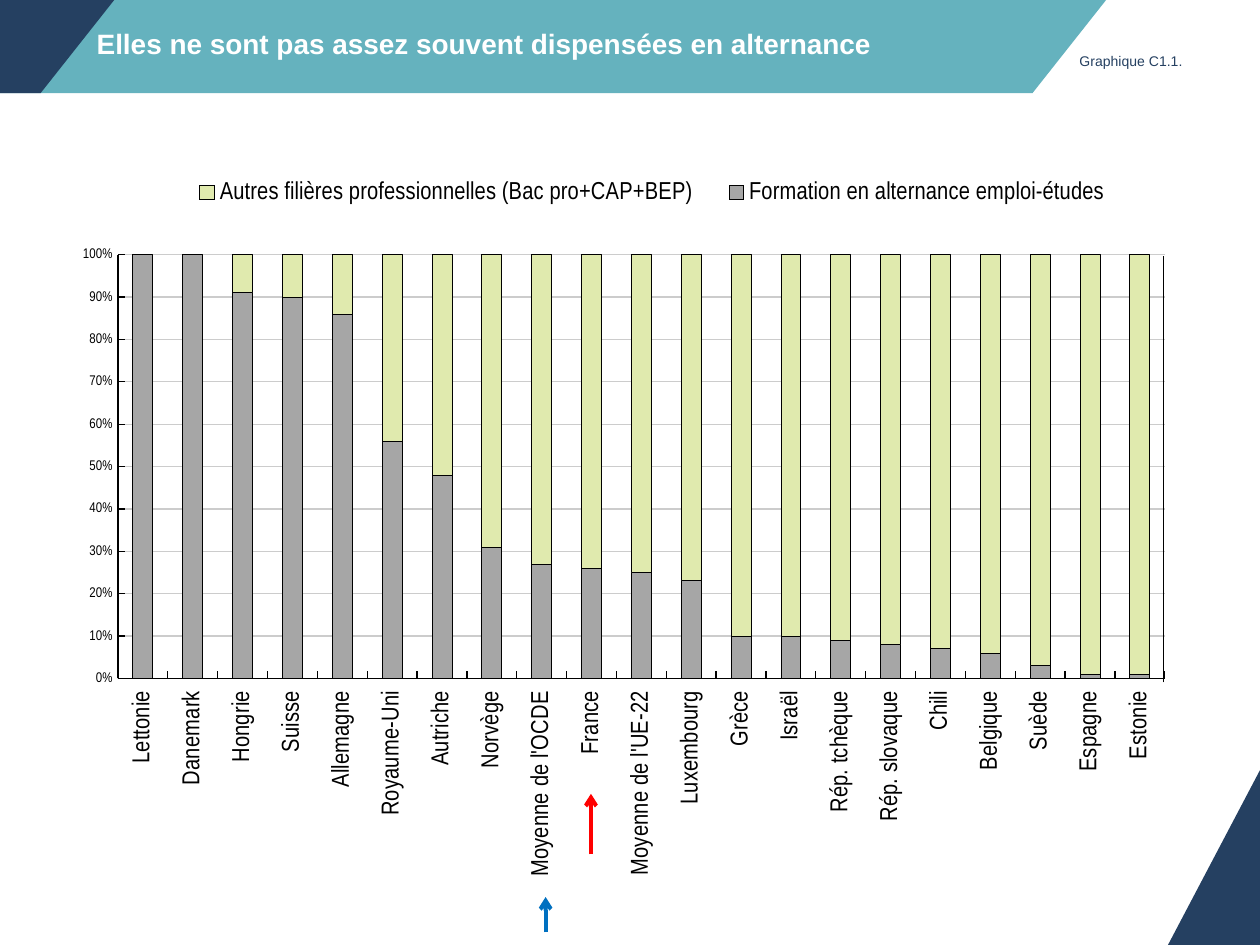
from lxml import etree
from pptx import Presentation
from pptx.chart.data import CategoryChartData
from pptx.dml.color import RGBColor
from pptx.enum import chart as ch, shapes, text
from pptx.oxml import ns
from pptx.util import Pt

TEAL = RGBColor(0x65, 0xB2, 0xBE)
NAVY = RGBColor(0x25, 0x40, 0x61)
WHITE = RGBColor(0xFF, 0xFF, 0xFF)
BLACK = RGBColor(0, 0, 0)
RED = RGBColor(0xFF, 0, 0)
BLUE = RGBColor(0, 0x70, 0xC0)
GRID = RGBColor(0xCC, 0xCC, 0xCC)
GREY = RGBColor(0xA6, 0xA6, 0xA6)
LIME = RGBColor(0xE0, 0xEA, 0xAE)


def place(element, index, *fractions):
    """Give a legend or plot area a manual layout: x, y, w, h as shares of the chart."""
    for old in element.findall(ns.qn("c:layout")):
        element.remove(old)
    layout = etree.Element(ns.qn("c:layout"))
    manual = etree.SubElement(layout, ns.qn("c:manualLayout"))
    if element.tag == ns.qn("c:plotArea"):
        etree.SubElement(manual, ns.qn("c:layoutTarget"), val="inner")
    for side in "xy":
        etree.SubElement(manual, ns.qn(f"c:{side}Mode"), val="edge")
    for side, fraction in zip("xywh", fractions):
        etree.SubElement(manual, ns.qn(f"c:{side}"), val=str(fraction))
    element.insert(index, layout)


def style_font(font, **values):
    color = values.pop("color", BLACK)
    for name, value in values.items():
        setattr(font, name, value)
    font.color.rgb = color


deck = Presentation()
deck.slide_width, deck.slide_height = Pt(720), Pt(540)
page = deck.slides.add_slide(deck.slide_layouts[6])

# Banner and corner
slanted = shapes.MSO_SHAPE.PARALLELOGRAM
corner = shapes.MSO_SHAPE.ISOSCELES_TRIANGLE
for kind, left, top, width, height, color in (
    (slanted, -42.5, 0, 674.6, 53.3, TEAL),
    (slanted, -42, 0, 107.3, 53.3, NAVY),
    (corner, 660.2, 417.6, 143.3, 136.1, NAVY),
):
    block = page.shapes.add_shape(kind, Pt(left), Pt(top), Pt(width), Pt(height))
    block.shadow.inherit = False
    block.fill.solid()
    block.fill.fore_color.rgb = color
    block.line.fill.background()
    if kind == slanted:
        block.adjustments[0] = 0.79

# Title and reference
for words, left, top, width, height, anchor, font in (
    ("Elles ne sont pas assez souvent dispensées en alternance", 48.2, 0, 566.6, 49,
     text.MSO_ANCHOR.MIDDLE, {"size": Pt(16), "bold": True, "color": WHITE}),
    ("Graphique C1.1.", 609.8, 26.6, 79.2, 26.6,
     text.MSO_ANCHOR.TOP, {"size": Pt(8), "color": NAVY}),
):
    box = page.shapes.add_textbox(Pt(left), Pt(top), Pt(width), Pt(height))
    box.text_frame.word_wrap = True
    box.text_frame.vertical_anchor = anchor
    span = box.text_frame.paragraphs[0].add_run()
    span.text = words
    style_font(span.font, name="Arial", **font)

# Chart: the two series add up to 100 %
apprentices = {
    "Lettonie": 100, "Danemark": 100, "Hongrie": 91, "Suisse": 90, "Allemagne": 86,
    "Royaume-Uni": 56, "Autriche": 48, "Norvège": 31, "Moyenne de l'OCDE": 27,
    "France": 26, "Moyenne de l'UE-22": 25, "Luxembourg": 23, "Grèce": 10,
    "Israël": 10, "Rép. tchèque": 9, "Rép. slovaque": 8, "Chili": 7,
    "Belgique": 6, "Suède": 3, "Espagne": 1, "Estonie": 1,
}
data = CategoryChartData()
data.categories = list(apprentices)
data.add_series("Formation en alternance emploi-études", list(apprentices.values()))
data.add_series("Autres filières professionnelles (Bac pro+CAP+BEP)",
                [100 - share for share in apprentices.values()])
chart = page.shapes.add_chart(ch.XL_CHART_TYPE.COLUMN_STACKED_100, Pt(42.5), Pt(87.1),
                              Pt(623.5), Pt(417.6), data).chart
chart.has_title = False
style_font(chart.font, name="Arial Narrow", size=Pt(10))
plot = chart.plots[0]
plot.gap_width, plot.overlap, plot.vary_by_categories = 150, 100, False
for series, color in zip(plot.series, (GREY, LIME)):
    series.format.fill.solid()
    series.format.fill.fore_color.rgb = color
    series.format.line.color.rgb = BLACK
    series.format.line.width = Pt(0.5)

countries, percent = chart.category_axis, chart.value_axis
for axis, size in ((countries, 14), (percent, 8)):
    axis.major_tick_mark = ch.XL_TICK_MARK.INSIDE
    axis.minor_tick_mark = ch.XL_TICK_MARK.NONE
    axis.format.line.color.rgb = BLACK
    axis.format.line.width = Pt(0.75)
    style_font(axis.tick_labels.font, name="Arial Narrow", size=Pt(size))
countries.tick_label_position = ch.XL_TICK_LABEL_POSITION.LOW
labels = countries._element.find(f"{ns.qn('c:txPr')}/{ns.qn('a:bodyPr')}")
labels.set("rot", "-5400000")
labels.set("vert", "horz")
percent.minimum_scale, percent.maximum_scale, percent.major_unit = 0, 1, 0.1
percent.tick_labels.number_format = "0%"
percent.tick_labels.number_format_is_linked = False
percent.has_major_gridlines = True
percent.major_gridlines.format.line.color.rgb = GRID
percent.major_gridlines.format.line.width = Pt(0.75)

chart.has_legend = True
legend = chart.legend
legend.position = ch.XL_LEGEND_POSITION.RIGHT
legend.include_in_layout = True
style_font(legend.font, name="Arial Narrow", size=Pt(14))
place(legend._element, 1, 0.09, 0.02, 0.88, 0.07)
place(chart._chartSpace.chart.plotArea, 0, 0.04, 0.14, 0.96, 0.58)

# Right edge of the plot, then the arrows under France and the OECD mean
for x, start, end, color, width, head in (
    (664.8, 390, 146.4, BLACK, 0.75, False),
    (311.8, 532.8, 512.6, BLUE, 2.25, True),
    (337.7, 488.2, 453.6, RED, 2.25, True),
):
    line = page.shapes.add_connector(shapes.MSO_CONNECTOR.STRAIGHT,
                                     Pt(x), Pt(start), Pt(x), Pt(end))
    line.line.color.rgb = color
    line.line.width = Pt(width)
    if head:
        etree.SubElement(line.line._get_or_add_ln(), ns.qn("a:tailEnd"), type="arrow")
    etree.SubElement(line._element.spPr, ns.qn("a:effectLst"))

deck.save("out.pptx")
